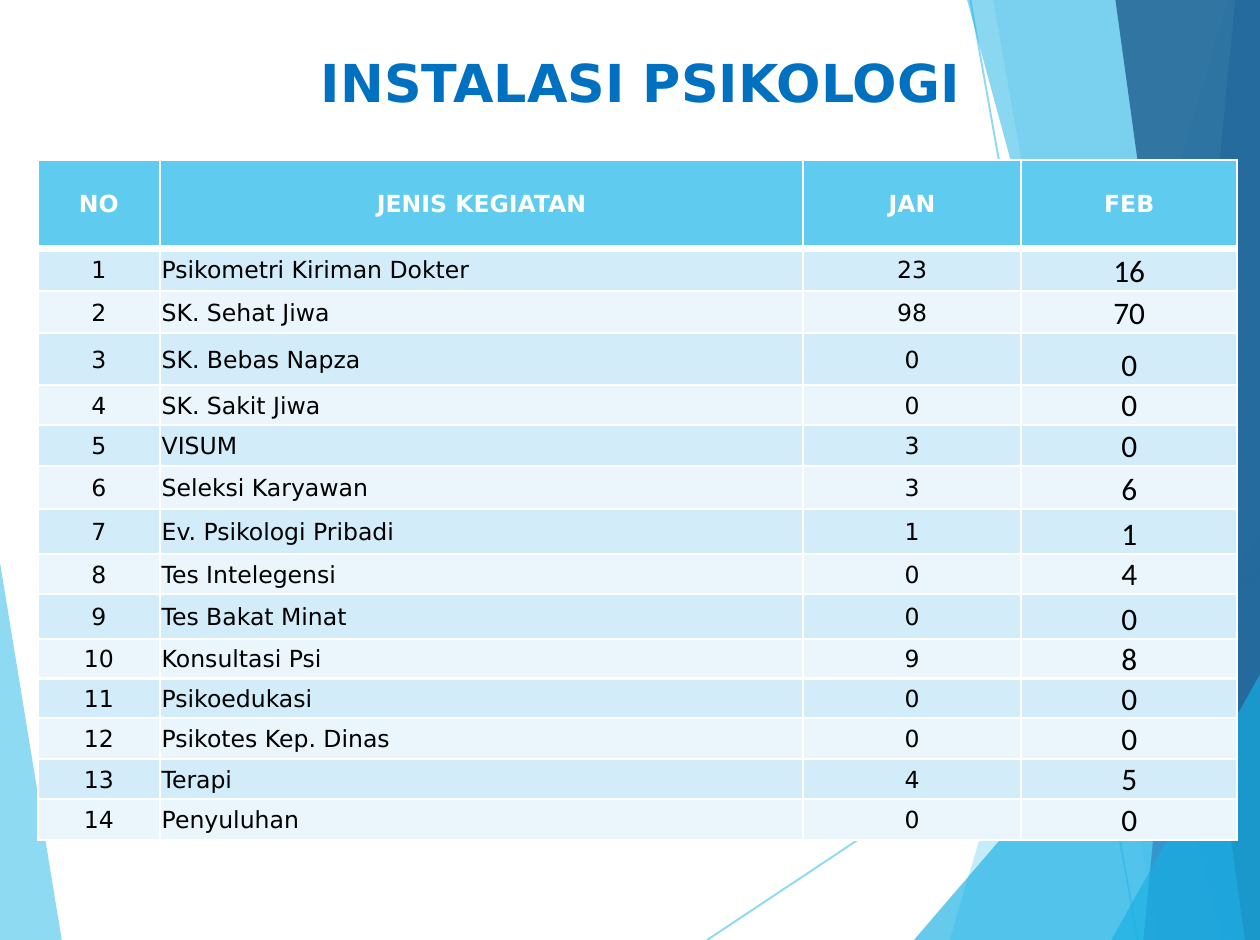
from lxml.etree import SubElement
from pptx import Presentation
from pptx.dml.color import RGBColor
from pptx.enum.shapes import MSO_CONNECTOR
from pptx.enum.text import MSO_ANCHOR as Anchor, PP_ALIGN as Align
from pptx.oxml.ns import qn
from pptx.util import Inches, Pt

COLORS = {
    "sky": "5FCBEF", "cyan": "17B0E4", "blue": "2E83C3", "navy": "226292",
    "title": "0070C0", "white": "FFFFFF", "black": "000000",
    "band_dark": "D2ECF9", "band_light": "EAF6FC",
}
TITLE = "INSTALASI PSIKOLOGI"
HEADINGS = ["NO", "JENIS KEGIATAN", "JAN", "FEB"]
ACTIVITIES = [  # activity, January, February
    ("Psikometri Kiriman Dokter", 23, 16),
    ("SK. Sehat Jiwa", 98, 70),
    ("SK. Bebas Napza", 0, 0),
    ("SK. Sakit Jiwa", 0, 0),
    ("VISUM", 3, 0),
    ("Seleksi Karyawan", 3, 6),
    ("Ev. Psikologi Pribadi", 1, 1),
    ("Tes Intelegensi", 0, 4),
    ("Tes Bakat Minat", 0, 0),
    ("Konsultasi Psi", 9, 8),
    ("Psikoedukasi", 0, 0),
    ("Psikotes Kep. Dinas", 0, 0),
    ("Terapi", 4, 5),
    ("Penyuluhan", 0, 0),
]
COLUMN_WIDTHS = [0.65, 3.42, 1.16, 1.15]
ROW_HEIGHTS = [0.47, 0.23, 0.22, 0.28, 0.21, 0.22, 0.23, 0.24,
               0.21, 0.24, 0.21, 0.21, 0.22, 0.21, 0.22]

# Background facets, back to front: colour, opacity in percent, corners
LEFT_FACET = ("sky", 70, [(-0.01, 2.93), (0.33, 5.01), (-0.01, 5)])
RAYS = [((3.76, 5), (6.71, 3.04)), ((5.16, 0), (6.05, 5))]
RIGHT_FACETS = [
    ("sky", 36, [(6.53, 0), (5.05, 5), (6.71, 5.01), (6.71, 0.01)]),
    ("sky", 20, [(5.28, -0.01), (6.16, 5), (6.71, 5), (6.71, -0.01)]),
    ("cyan", 66, [(4.86, 5), (6.7, 2.86), (6.71, 5)]),
    ("cyan", 50, [(5.14, -0.01), (6.5, 5), (6.71, 4.99), (6.71, -0.01)]),
    ("blue", 70, [(6.57, -0.01), (6.08, 5), (6.71, 5), (6.7, -0.01)]),
    ("navy", 82, [(5.93, -0.01), (6.62, 5), (6.71, 5), (6.7, -0.01)]),
    ("cyan", 66, [(5.91, 5), (6.71, 3.57), (6.71, 5)]),
]


def rgb(name):
    return RGBColor.from_string(COLORS[name])


def set_opacity(shape, percent):
    for color in shape._element.iter(qn("a:srgbClr")):
        SubElement(color, qn("a:alpha"), val=str(percent * 1000))


def add_facet(slide, color, opacity, corners):
    # The builder rounds to whole units, so corners are given in EMU
    first, *others = [(Inches(x), Inches(y)) for x, y in corners]
    builder = slide.shapes.build_freeform(*first)
    builder.add_line_segments(others, close=True)
    facet = builder.convert_to_shape()
    facet.shadow.inherit = False
    facet.fill.solid()
    facet.fill.fore_color.rgb = rgb(color)
    facet.line.fill.background()
    set_opacity(facet, opacity)


def add_ray(slide, start, end):
    ray = slide.shapes.add_connector(
        MSO_CONNECTOR.STRAIGHT, *map(Inches, start + end))
    ray.line.color.rgb = rgb("sky")
    ray.line.width = Pt(0.75)
    SubElement(ray._element.spPr, qn("a:effectLst"))
    set_opacity(ray, 70)


def write(frame, text, size=9, font="DejaVu Sans", color="black",
          bold=False, align=Align.CENTER):
    paragraph = frame.paragraphs[0]
    paragraph.alignment = align
    run = paragraph.add_run()
    run.text = str(text)
    run.font.size = Pt(size)
    run.font.name = font
    run.font.bold = bold
    run.font.color.rgb = rgb(color)


def style_cell(cell, fill, anchor, insets, top=1, bottom=1):
    cell.vertical_anchor = anchor
    (cell.margin_left, cell.margin_top,
     cell.margin_right, cell.margin_bottom) = map(Inches, insets)
    properties = cell._tc.get_or_add_tcPr()
    for side, width in (("L", 1), ("R", 1), ("T", top), ("B", bottom)):
        border = SubElement(properties, qn(f"a:ln{side}"), w=str(Pt(width)))
        solid = SubElement(border, qn("a:solidFill"))
        SubElement(solid, qn("a:srgbClr"), val=COLORS["white"])
    cell.fill.solid()
    cell.fill.fore_color.rgb = rgb(fill)


def add_activity_table(slide):
    table = slide.shapes.add_table(
        len(ROW_HEIGHTS), len(COLUMN_WIDTHS), Inches(0.2), Inches(0.85),
        Inches(sum(COLUMN_WIDTHS)), Inches(sum(ROW_HEIGHTS))).table
    for column, width in zip(table.columns, COLUMN_WIDTHS):
        column.width = Inches(width)
    for row, height in zip(table.rows, ROW_HEIGHTS):
        row.height = Inches(height)

    for c, heading in enumerate(HEADINGS):
        cell = table.cell(0, c)
        style_cell(cell, "sky", Anchor.MIDDLE, (0.1, 0.05, 0.1, 0.05), bottom=3)
        write(cell.text_frame, heading, color="white", bold=True)

    formats = [{}, {"align": Align.LEFT}, {}, {"size": 12, "font": "Calibri"}]
    for number, activity in enumerate(ACTIVITIES, start=1):
        band = "band_dark" if number % 2 else "band_light"
        for c, value in enumerate((number, *activity)):
            cell = table.cell(number, c)
            anchor = Anchor.BOTTOM if HEADINGS[c] == "FEB" else Anchor.MIDDLE
            style_cell(cell, band, anchor, (0.01, 0.01, 0.01, 0),
                       top=3 if number == 1 else 1)
            write(cell.text_frame, value, **formats[c])


def main():
    deck = Presentation()
    deck.slide_width, deck.slide_height = Inches(6.7), Inches(5)
    slide = deck.slides.add_slide(deck.slide_layouts[6])

    # Background
    add_facet(slide, *LEFT_FACET)
    for start, end in RAYS:
        add_ray(slide, start, end)
    for facet in RIGHT_FACETS:
        add_facet(slide, *facet)

    # Title
    title = slide.shapes.add_textbox(
        Inches(0.36), Inches(0.22), Inches(6.09), Inches(0.55)).text_frame
    title.word_wrap = True
    write(title, TITLE, size=20, color="title", bold=True)

    # Table
    add_activity_table(slide)
    deck.save("out.pptx")


if __name__ == "__main__":
    main()
